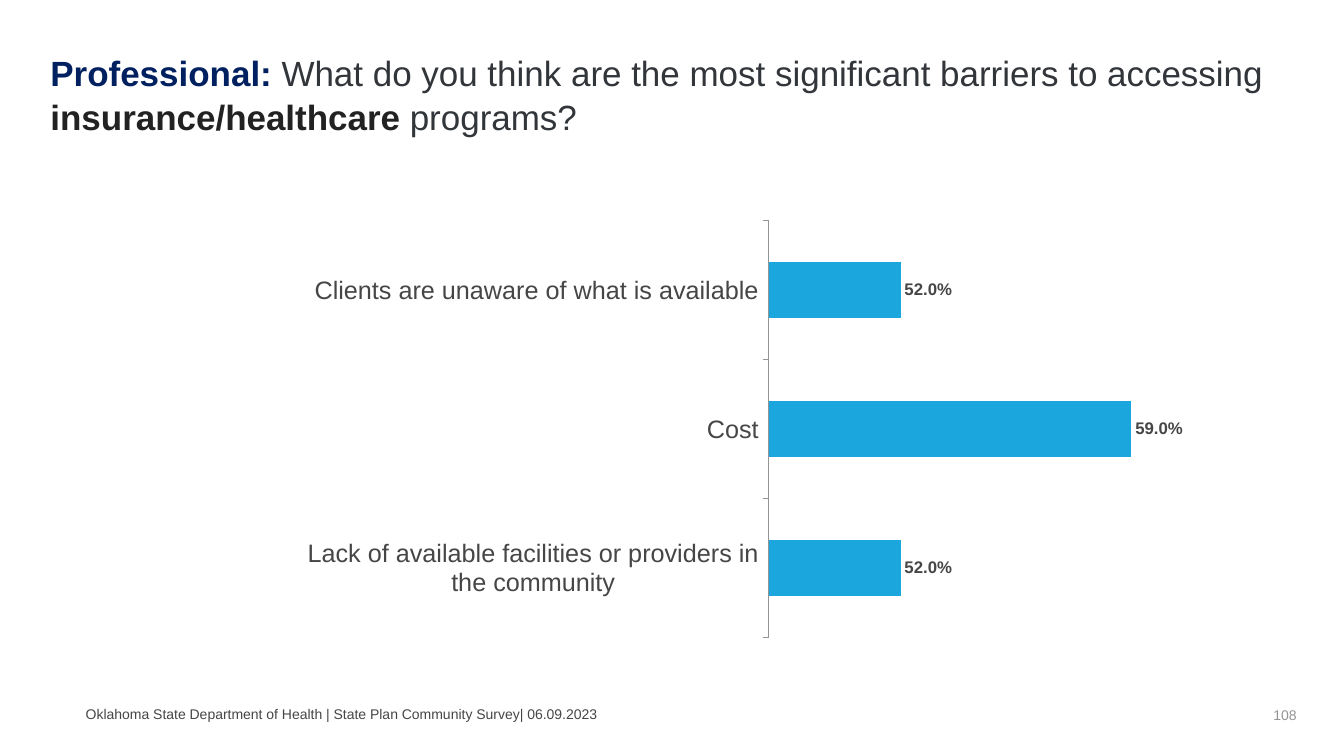
"""Build the survey slide on barriers to insurance and healthcare programs."""
from dataclasses import dataclass

from lxml import etree
from pptx import Presentation
from pptx.chart.data import CategoryChartData
from pptx.dml.color import RGBColor
from pptx.enum.chart import XL_CHART_TYPE, XL_LABEL_POSITION, XL_TICK_MARK
from pptx.enum.text import MSO_ANCHOR, PP_ALIGN
from pptx.oxml.ns import qn
from pptx.util import Inches, Pt

BAR = XL_CHART_TYPE.BAR_CLUSTERED
END = XL_LABEL_POSITION.OUTSIDE_END
OUT, NONE = XL_TICK_MARK.OUTSIDE, XL_TICK_MARK.NONE
TOP, MID = MSO_ANCHOR.TOP, MSO_ANCHOR.MIDDLE
LEFT, RIGHT = PP_ALIGN.LEFT, PP_ALIGN.RIGHT
WIDE, HIGH = Inches(13.33), Inches(7.5)


@dataclass(frozen=True)
class Theme:
    """Hold the colours and type sizes."""
    face: str = "Arial"
    navy: str = "002060"
    slate: str = "32363A"
    black: str = "222222"
    text: str = "464646"
    grey: str = "949494"
    bar: str = "1CA6DE"
    head: int = 25
    axis: int = 18
    label: int = 12
    foot: int = 10


@dataclass(frozen=True)
class Area:
    """Place an item in percent of the slide's width and height."""
    x: float
    y: float
    w: float
    h: float

    def box(self) -> tuple[int, int, int, int]:
        """Return left, top, width and height."""
        return (int(WIDE * self.x / 100), int(HIGH * self.y / 100),
                int(WIDE * self.w / 100), int(HIGH * self.h / 100))


@dataclass(frozen=True)
class Run:
    """Describe a stretch of text."""
    text: str
    tint: str
    bold: bool = False


@dataclass(frozen=True)
class Note:
    """Describe a text box."""
    area: Area
    runs: tuple[Run, ...]
    size: int
    anchor: MSO_ANCHOR = MID
    align: PP_ALIGN = LEFT
    inset: float = 0
    lead: float = 1


THEME = Theme()
NOTES = (
    Note(Area(3.75, 6, 91.07, 12.27), (
        Run("Professional: ", THEME.navy, True),
        Run("What do you think are the most significant barriers to accessing ",
            THEME.slate),
        Run("insurance/healthcare ", THEME.black, True),
        Run("programs?", THEME.slate)), THEME.head, TOP, lead=1.04),
    Note(Area(74.72, 93.07, 22.5, 2.93), (Run("108", THEME.grey),),
         THEME.foot, align=RIGHT, inset=0.1),
    Note(Area(6.38, 92.93, 66.77, 2.93), (
        Run("Oklahoma State Department of Health | State Plan Community Survey"
            "| 06.09.2023", THEME.text),), THEME.foot),
)
PLOT = Area(22.81, 27.2, 66.77, 59.2)
INNER = {"layoutTarget": "inner", "xMode": "edge", "yMode": "edge",
         "x": "0.515", "y": "0.034", "w": "0.441", "h": "0.931"}
RATES = {
    "Lack of available facilities or providers in the community": 0.52,
    "Cost": 0.59,
    "Clients are unaware of what is available": 0.52,
}


def apply(item, form: dict) -> None:
    """Set each format value on an item."""
    for key, value in form.items():
        setattr(item, key, value)


def style(font, size: int, tint: str, bold: bool = False) -> None:
    """Format a font."""
    apply(font, {"name": THEME.face, "size": Pt(size), "bold": bold})
    font.color.rgb = RGBColor.from_string(tint)


def write(slide, note: Note) -> None:
    """Draw a text box."""
    frame = slide.shapes.add_textbox(*note.area.box()).text_frame
    apply(frame, {"word_wrap": True, "vertical_anchor": note.anchor,
                  "margin_left": Inches(note.inset)})
    para = frame.paragraphs[0]
    apply(para, {"alignment": note.align, "line_spacing": note.lead})
    for part in note.runs:
        run = para.add_run()
        run.text = part.text
        style(run.font, note.size, part.tint, part.bold)


def place(chart) -> None:
    """Fix the inner plot area of a chart."""
    plot = chart.element.find(".//" + qn("c:plotArea"))
    for old in plot.findall(qn("c:layout")):
        plot.remove(old)
    layout = etree.Element(qn("c:layout"))
    manual = etree.SubElement(layout, qn("c:manualLayout"))
    for key, value in INNER.items():
        etree.SubElement(manual, qn("c:" + key)).set("val", value)
    plot.insert(0, layout)


def graph(slide) -> None:
    """Draw the bar chart."""
    data = CategoryChartData(number_format="0.0%")
    data.categories = list(RATES)
    data.add_series("Series 1", list(RATES.values()))
    chart = slide.shapes.add_chart(BAR, *PLOT.box(), data).chart
    apply(chart, {"has_legend": False, "has_title": False})
    style(chart.font, THEME.axis, THEME.text)
    place(chart)

    cats = chart.category_axis
    apply(cats, {"major_tick_mark": OUT, "minor_tick_mark": NONE,
                 "has_major_gridlines": False})
    style(cats.tick_labels.font, THEME.axis, THEME.text)
    line = cats.format.line
    line.width = Pt(0.5)
    line.color.rgb = RGBColor.from_string(THEME.grey)
    apply(chart.value_axis, {"visible": False, "has_major_gridlines": False,
                             "minimum_scale": 0.48, "maximum_scale": 0.6})

    plot = chart.plots[0]
    apply(plot, {"gap_width": 150, "vary_by_categories": False})
    bars = plot.series[0]
    bars.format.fill.solid()
    bars.format.fill.fore_color.rgb = RGBColor.from_string(THEME.bar)
    tags = bars.data_labels
    apply(tags, {"show_value": True, "position": END, "number_format": "0.0%",
                 "number_format_is_linked": False})
    style(tags.font, THEME.label, THEME.text, True)


def main() -> None:
    """Build and save the deck."""
    deck = Presentation()
    apply(deck, {"slide_width": WIDE, "slide_height": HIGH})
    slide = deck.slides.add_slide(deck.slide_layouts[6])
    for note in NOTES:
        write(slide, note)
    graph(slide)
    deck.save("out.pptx")


if __name__ == "__main__":
    main()
